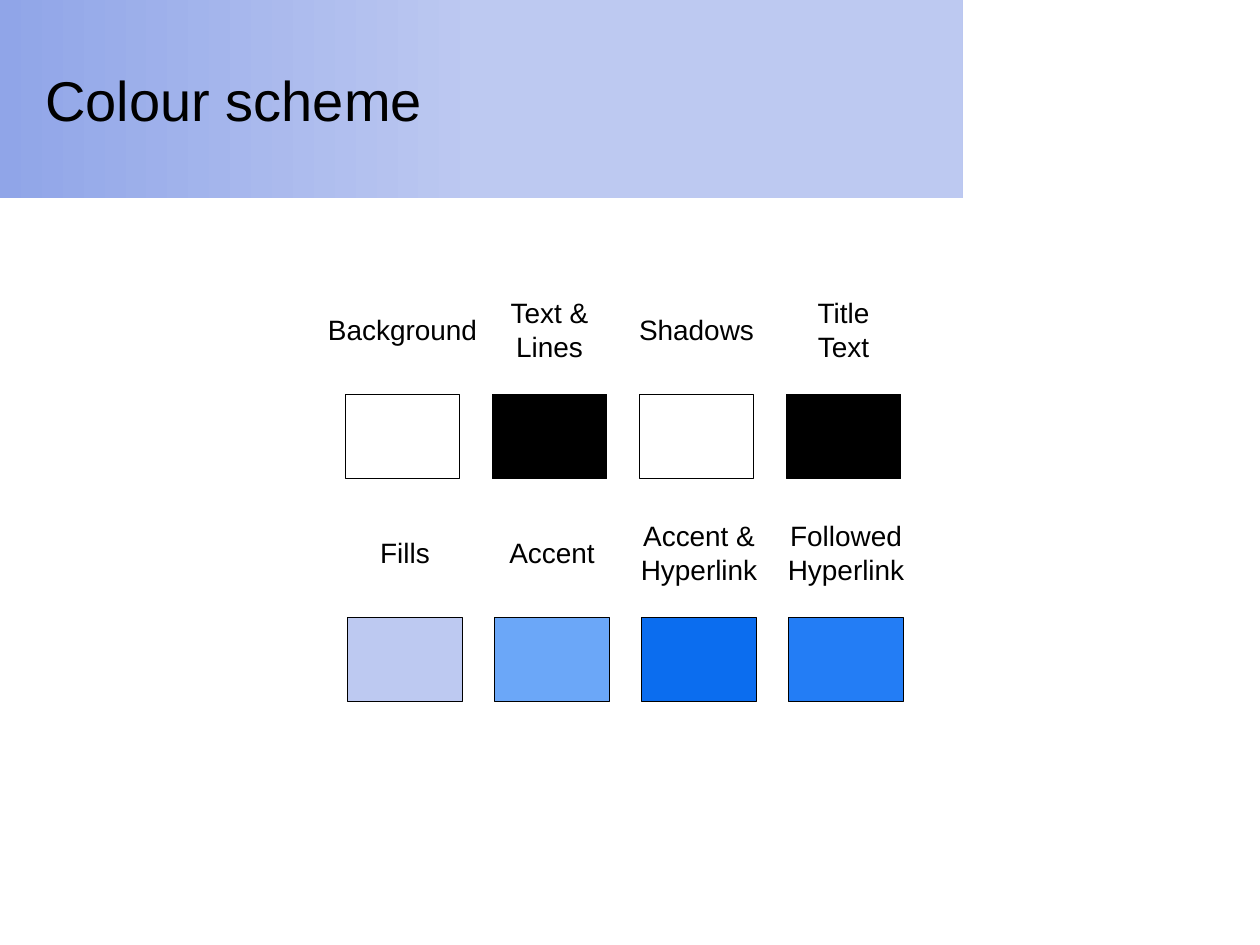
from pptx import Presentation
from pptx.dml.color import RGBColor
from pptx.enum import shapes, text
from pptx.util import Inches, Pt

BLACK = RGBColor(0x00, 0x00, 0x00)
WHITE = RGBColor(0xFF, 0xFF, 0xFF)
BAND_START = RGBColor(0x90, 0xA5, 0xE8)
FILLS = RGBColor(0xBD, 0xC9, 0xF1)
ACCENT = RGBColor(0x6B, 0xA7, 0xF8)
HYPERLINK = RGBColor(0x0B, 0x6D, 0xEF)
FOLLOWED = RGBColor(0x23, 0x7D, 0xF5)

SWATCH_W, SWATCH_H = 0.91, 0.67
ROW_SPAN = 3.5  # from the first swatch's left to the last one's
LABEL_RISE = 0.51  # from a label's middle down to its swatch
LABEL_PAD, LINE_H = 0.1, 0.27

# Row origin, then label, label width and colour of each swatch
ROWS = [
    ((2.74, 3.13), [("Background", 1.4, WHITE), ("Text &\nLines", 0.86, BLACK),
                    ("Shadows", 1.13, WHITE), ("Title\vText", 0.65, BLACK)]),
    ((2.76, 4.9), [("Fills", 0.63, FILLS), ("Accent", 0.9, ACCENT),
                   ("Accent &\nHyperlink", 1.16, HYPERLINK),
                   ("Followed\nHyperlink", 1.16, FOLLOWED)]),
]


def write(tf, words, size, align, color=BLACK, font="Arial"):
    tf.text = words
    for p in tf.paragraphs:
        p.alignment = align
        p.font.size = Pt(size)
        for r in p.runs:
            r.font.name, r.font.size = font, Pt(size)
            r.font.color.rgb = color


def add_rect(s, x, y, w, h):
    sp = s.shapes.add_shape(shapes.MSO_SHAPE.RECTANGLE,
                            *map(Inches, (x, y, w, h)))
    sp.shadow.inherit = False
    return sp


def add_header(s, x, y, w, h):
    """Gradient band with the title placeholder on top of it."""
    band = add_rect(s, x, y, w, h)
    band.line.fill.background()
    band.fill.gradient()
    band.fill.gradient_angle = 0
    stops = band.fill.gradient_stops
    for stop, position, color in zip(stops, (0, 0.5), (BAND_START, FILLS)):
        stop.position = position
        stop.color.rgb = color

    title = s.shapes.title
    band.element.addnext(title.element)
    title.left, title.top = Inches(x + 0.26), Inches(y + 0.16)
    title.width, title.height = Inches(w - 0.55), Inches(h - 0.32)
    tf = title.text_frame
    tf.vertical_anchor = text.MSO_ANCHOR.MIDDLE
    tf.auto_size = text.MSO_AUTO_SIZE.NONE
    write(tf, "Colour scheme", 32, text.PP_ALIGN.LEFT)


def add_label(s, words, center_x, center_y, w):
    lines = len(words.splitlines())
    h = LABEL_PAD + LINE_H * lines
    box = s.shapes.add_textbox(Inches(center_x - w / 2), Inches(center_y - h / 2),
                               Inches(w), Inches(h))
    tf = box.text_frame
    tf.word_wrap = False
    tf.auto_size = text.MSO_AUTO_SIZE.SHAPE_TO_FIT_TEXT
    write(tf, words, 16, text.PP_ALIGN.CENTER)


def add_swatch_row(s, x, y, swatches):
    pitch = ROW_SPAN / (len(swatches) - 1)
    for i, (words, label_w, color) in enumerate(swatches):
        left = x + i * pitch
        swatch = add_rect(s, left, y, SWATCH_W, SWATCH_H)
        swatch.fill.solid()
        swatch.fill.fore_color.rgb = color
        swatch.line.color.rgb = BLACK
        swatch.line.width = Pt(0.75)
        add_label(s, words, left + SWATCH_W / 2, y - LABEL_RISE, label_w)


def main():
    prs = Presentation()
    prs.slide_width, prs.slide_height = Inches(10), Inches(7.5)
    s = prs.slides.add_slide(prs.slide_layouts[5])
    s.background.fill.solid()
    s.background.fill.fore_color.rgb = WHITE
    add_header(s, 0, 0, 7.64, 1.57)
    for (x, y), swatches in ROWS:
        add_swatch_row(s, x, y, swatches)
    prs.save("out.pptx")


if __name__ == "__main__":
    main()
